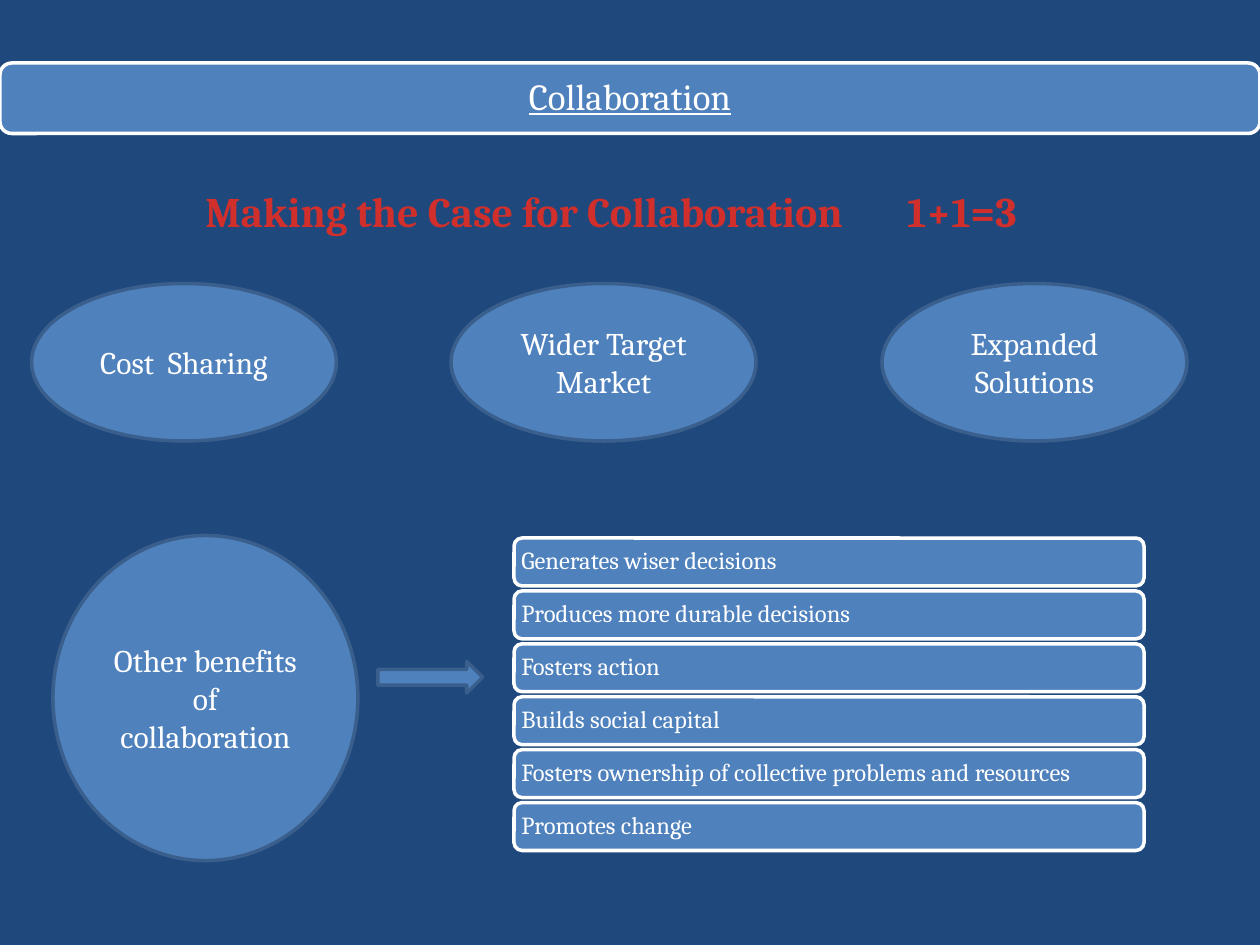
"""Build the Collaboration slide: its case, three gains and other benefits."""
from lxml import etree
from pptx import Presentation
from pptx.dml import color
from pptx.enum import shapes, text
from pptx.oxml import ns
from pptx.util import Inches, Pt

BLUE, OUTLINE, WHITE = "4F81BD", "3A5F8C", "FFFFFF"


def paint(target, value):
    target.rgb = color.RGBColor.from_string(value)


def add_block(kind, place, outline, words="", size=18, align="CENTER", **frame_values):
    block = slide.shapes.add_shape(kind, *map(Inches, place))
    block.shadow.inherit = False
    block.fill.solid()
    paint(block.fill.fore_color, BLUE)
    paint(block.line.color, outline)
    block.line.width = Pt(2)
    for name, value in frame_values.items():
        setattr(block.text_frame, name, value)
    para = block.text_frame.paragraphs[0]
    para.text = words
    para.alignment = text.PP_ALIGN[align]
    for name, value in {"name": "Cambria", "size": Pt(size)}.items():
        setattr(para.font, name, value)
    paint(para.font.color, WHITE)
    return block


deck = Presentation()
deck.slide_width, deck.slide_height = Inches(10), Inches(7.5)
slide = deck.slides.add_slide(deck.slide_layouts[5])
slide.background.fill.solid()
paint(slide.background.fill.fore_color, "1F497D")

bar = add_block(shapes.MSO_SHAPE.ROUNDED_RECTANGLE, (0, 0.5, 10, 0.56), WHITE)
title = slide.shapes.title
bar._element.addnext(title._element)
for name, value in {"left": 0, "top": 0.5, "width": 10, "height": 0.56}.items():
    setattr(title, name, Inches(value))
frame = title.text_frame
frame.text = "Collaboration"
frame.auto_size = text.MSO_AUTO_SIZE.NONE
frame.vertical_anchor = text.MSO_ANCHOR.MIDDLE
para = frame.paragraphs[0]
para.alignment = text.PP_ALIGN.CENTER
para.line_spacing = 0.9
for name, value in {"name": "Cambria", "size": Pt(21), "underline": True}.items():
    setattr(para.font, name, value)
paint(para.font.color, WHITE)

heading = slide.shapes.add_textbox(Inches(1.33), Inches(1.42), Inches(7.05), Inches(0.5))
frame = heading.text_frame
frame.word_wrap = True
frame.margin_left = Inches(0.3)
para = frame.paragraphs[0]
para.text = "Making the Case for Collaboration\t1+1=3"
tabs = etree.SubElement(para._p.get_or_add_pPr(), ns.qn("a:tabLst"))
etree.SubElement(tabs, ns.qn("a:tab"), pos=str(Inches(5.57)), algn="l")
for name, value in {"name": "Cambria", "size": Pt(24), "bold": True}.items():
    setattr(para.font, name, value)
paint(para.font.color, "D02F2C")

ovals = [
    ("Cost  Sharing", 0.25, 2.25, 1.25),
    ("Wider Target Market", 3.58, 2.25, 1.25),
    ("Expanded Solutions", 7, 2.25, 1.25),
    ("Other benefits of collaboration", 0.42, 4.25, 2.58),
]
for words, left, top, height in ovals:
    add_block(shapes.MSO_SHAPE.OVAL, (left, top, 2.42, height), OUTLINE, words)

add_block(shapes.MSO_SHAPE.RIGHT_ARROW, (3, 5.25, 0.83, 0.25), OUTLINE)

benefits = [
    "Generates wiser decisions",
    "Produces more durable decisions",
    "Fosters action",
    "Builds social capital",
    "Fosters ownership of collective problems and resources",
    "Promotes change",
]
for row, words in enumerate(benefits):
    place = (4.08, 4.27 + 0.42 * row, 5, 0.38)
    benefit = add_block(shapes.MSO_SHAPE.ROUNDED_RECTANGLE, place, WHITE, words, 14, "LEFT",
                        margin_left=Inches(0.04), margin_right=Inches(0.04),
                        margin_top=Inches(0.04), margin_bottom=Inches(0.04))
    benefit.text_frame.paragraphs[0].line_spacing = 0.9

deck.save("out.pptx")
